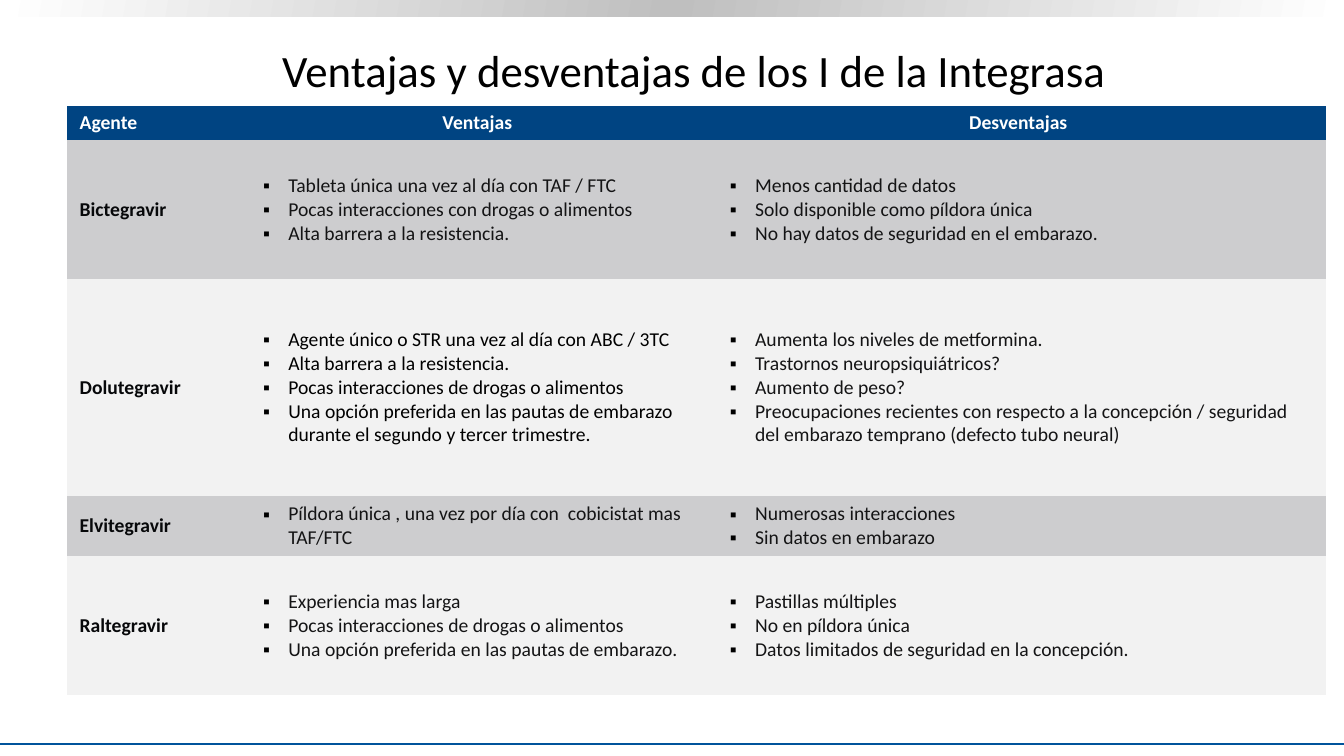
from copy import deepcopy

from lxml.etree import SubElement
from pptx import Presentation
from pptx.dml.color import RGBColor
from pptx.enum.shapes import MSO_CONNECTOR, MSO_SHAPE
from pptx.enum.text import MSO_ANCHOR, PP_ALIGN
from pptx.oxml.ns import qn
from pptx.util import Inches, Pt

TITLE = "Ventajas y desventajas de los I de la Integrasa"
HEADINGS = ["Agente", "Ventajas", "Desventajas"]
AGENTS = [
    ("Bictegravir",
     ["Tableta única una vez al día con TAF / FTC",
      "Pocas interacciones con drogas o alimentos",
      "Alta barrera a la resistencia."],
     ["Menos cantidad de datos",
      "Solo disponible como píldora única",
      "No hay datos de seguridad en el embarazo."]),
    ("Dolutegravir",
     ["Agente único o STR una vez al día con ABC / 3TC",
      "Alta barrera a la resistencia.",
      "Pocas interacciones de drogas o alimentos",
      "Una opción preferida en las pautas de embarazo durante el segundo y tercer trimestre."],
     ["Aumenta los niveles de metformina.",
      "Trastornos neuropsiquiátricos?",
      "Aumento de peso?",
      "Preocupaciones recientes con respecto a la concepción / seguridad "
      "del embarazo temprano (defecto tubo neural)"]),
    ("Elvitegravir",
     ["Píldora única , una vez por día con  cobicistat mas TAF/FTC"],
     ["Numerosas interacciones",
      "Sin datos en embarazo"]),
    ("Raltegravir",
     ["Experiencia mas larga",
      "Pocas interacciones de drogas o alimentos",
      "Una opción preferida en las pautas de embarazo."],
     ["Pastillas múltiples",
      "No en píldora única",
      "Datos limitados de seguridad en la concepción."]),
]
COLUMN_WIDTHS = [1.76, 4.63, 6.1]
ROW_HEIGHTS = [0.34, 1.38, 2.15, 0.6, 1.38]
ROW_FILLS = ["CDCDCF", "F2F2F2"]
BLACK_TEXT_AGENT = "Dolutegravir"
BAND_COLORS = ["FFFFFF", "BFBFBF", "FFFFFF"]
PLAIN_TABLE_STYLE = "{2D5ABB26-0587-4C30-8999-92F81FD0307C}"


def rgb(value):
    return RGBColor.from_string(value)


def style_runs(paragraph, size, color, bold=False):
    for run in paragraph.runs:
        run.font.name = "Calibri"
        run.font.size = Pt(size)
        run.font.bold = bold
        run.font.color.rgb = rgb(color)


def add_bullet(paragraph):
    properties = paragraph._p.get_or_add_pPr()
    properties.set("marL", str(Inches(0.31)))
    properties.set("indent", str(Inches(-0.25)))
    bullet_color = SubElement(properties, qn("a:buClr"))
    SubElement(bullet_color, qn("a:srgbClr"), val="000000")
    SubElement(properties, qn("a:buFont"), typeface="Arial")
    SubElement(properties, qn("a:buChar"), char="▪")


def fill_cell(cell, lines, fill, color, bold=False, bulleted=False, align=PP_ALIGN.LEFT):
    cell.fill.solid()
    cell.fill.fore_color.rgb = rgb(fill)
    cell.vertical_anchor = MSO_ANCHOR.MIDDLE
    cell.margin_left = cell.margin_right = Inches(0.13)
    cell.margin_top = cell.margin_bottom = Inches(0.05)
    cell.text_frame.text = "\n".join(lines)
    for paragraph in cell.text_frame.paragraphs:
        paragraph.alignment = align
        if bulleted:
            add_bullet(paragraph)
        style_runs(paragraph, 14, color, bold)


def add_top_band(slide, width):
    band = slide.shapes.add_shape(MSO_SHAPE.RECTANGLE, 0, 0, width, Inches(0.16))
    band.shadow.inherit = False
    band.line.fill.background()
    band.fill.gradient()
    band.fill.gradient_angle = 170
    stops = next(band._element.spPr.iter(qn("a:gsLst")))
    stops.insert(1, deepcopy(stops[0]))
    for index, (stop, color) in enumerate(zip(band.fill.gradient_stops, BAND_COLORS)):
        stop.position = index / 2
        stop.color.rgb = rgb(color)


def add_bottom_rule(slide, width):
    y = Inches(7.38)
    rule = slide.shapes.add_connector(MSO_CONNECTOR.STRAIGHT, 0, y, width, y)
    rule.line.color.rgb = rgb("00539B")
    rule.line.width = Pt(1.5)
    SubElement(rule._element.spPr, qn("a:effectLst"))


def add_title(slide):
    title = slide.shapes.title
    title.left, title.top = Inches(1.21), Inches(0.26)
    title.width, title.height = Inches(11.35), Inches(0.86)
    title.text_frame.text = TITLE
    title.text_frame.vertical_anchor = MSO_ANCHOR.MIDDLE
    heading = title.text_frame.paragraphs[0]
    heading.alignment = PP_ALIGN.CENTER
    style_runs(heading, 32, "000000")


def add_comparison(slide):
    frame = slide.shapes.add_table(
        len(ROW_HEIGHTS), len(COLUMN_WIDTHS), Inches(0.66), Inches(1.05),
        Inches(sum(COLUMN_WIDTHS)), Inches(sum(ROW_HEIGHTS)))
    table = frame.table
    next(table._tbl.iter(qn("a:tableStyleId"))).text = PLAIN_TABLE_STYLE
    for column, width in zip(table.columns, COLUMN_WIDTHS):
        column.width = Inches(width)
    for row, height in zip(table.rows, ROW_HEIGHTS):
        row.height = Inches(height)

    for column, heading in enumerate(HEADINGS):
        align = PP_ALIGN.CENTER if column else PP_ALIGN.LEFT
        fill_cell(table.cell(0, column), [heading], "004482", "FFFFFF", bold=True, align=align)
    for row, (agent, advantages, drawbacks) in enumerate(AGENTS, 1):
        fill = ROW_FILLS[(row - 1) % 2]
        advantage_color = "000000" if agent == BLACK_TEXT_AGENT else "141415"
        fill_cell(table.cell(row, 0), [agent], fill, "07080A", bold=True)
        fill_cell(table.cell(row, 1), advantages, fill, advantage_color, bulleted=True)
        fill_cell(table.cell(row, 2), drawbacks, fill, "141415", bulleted=True)


def main():
    deck = Presentation()
    deck.slide_width, deck.slide_height = Inches(13.33), Inches(7.5)
    slide = deck.slides.add_slide(deck.slide_layouts[5])
    add_top_band(slide, deck.slide_width)
    add_bottom_rule(slide, deck.slide_width)
    add_title(slide)
    add_comparison(slide)
    deck.save("out.pptx")


if __name__ == "__main__":
    main()
